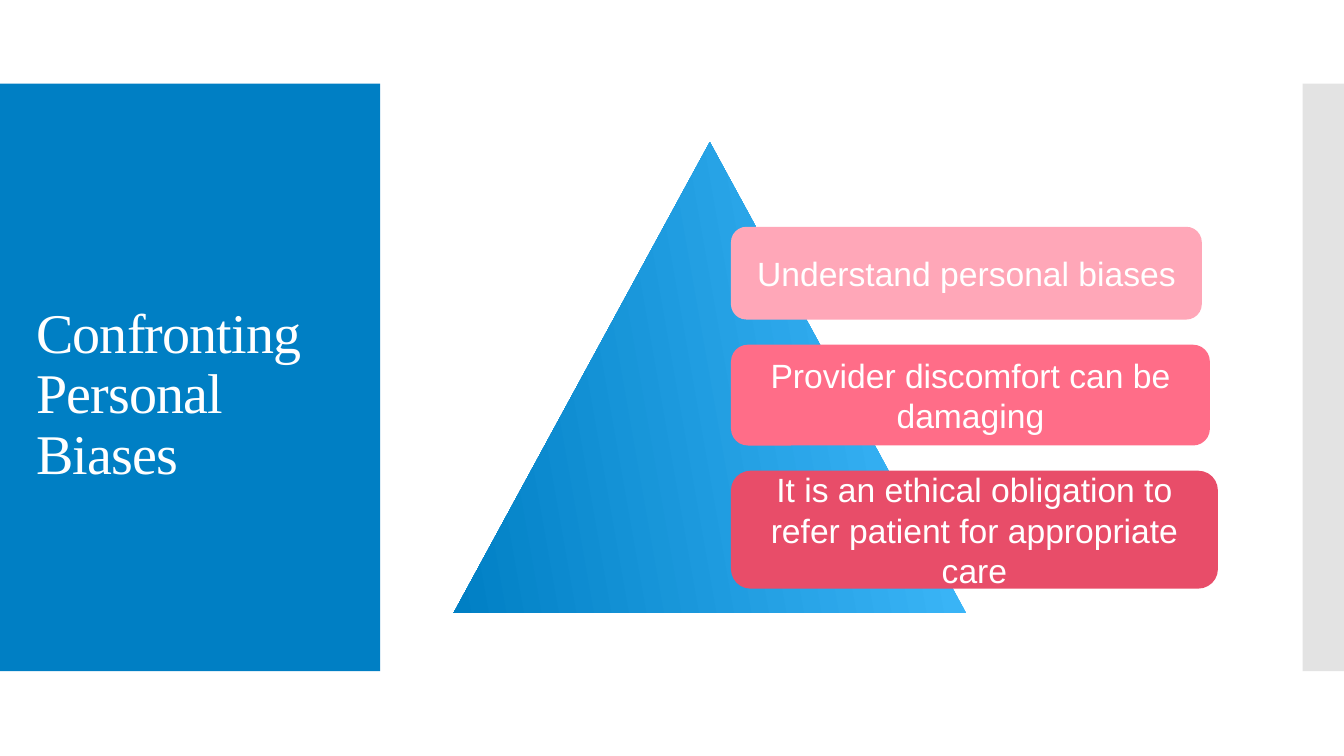
import pptx
import pptx.util
import pptx.dml.color
import pptx.enum.shapes
import pptx.enum.text
import lxml.etree
from pptx.util import Inches

# Content
TITLE = "Confronting Personal Biases"
# text, fill, width, height
STEPS = [
    ("Understand personal biases", "pale", 4.67, 0.92),
    ("Provider discomfort can be damaging", "pink", 4.75, 1),
    ("It is an ethical obligation to refer patient for appropriate care", "rose", 4.83, 1.17),
]
COLORS = {
    "blue": "007FC4", "sky": "43BDFF", "gray": "C8C8C8", "white": "FFFFFF",
    "pale": "FFA7B8", "pink": "FF6D88", "rose": "E84D69",
}
STEP_LEFT, STEP_TOP, STEP_GAP = 7.25, 2.25, 0.25
BAND_TOP, BAND_HEIGHT = 0.83, 5.83

SHAPES = pptx.enum.shapes.MSO_SHAPE
ALIGN = pptx.enum.text.PP_ALIGN


def rgb(color):
    return pptx.dml.color.RGBColor.from_string(COLORS[color])


def add_block(kind, left, top, width, height, color):
    block = slide.shapes.add_shape(
        kind, Inches(left), Inches(top), Inches(width), Inches(height))
    block.shadow.inherit = False
    block.line.fill.background()
    block.fill.solid()
    block.fill.fore_color.rgb = rgb(color)
    return block


def write(holder, text, size, font, align, line_spacing=None, tracking=None):
    frame = holder.text_frame
    frame.word_wrap = True
    frame.auto_size = pptx.enum.text.MSO_AUTO_SIZE.NONE
    frame.vertical_anchor = pptx.enum.text.MSO_ANCHOR.MIDDLE
    paragraph = frame.paragraphs[0]
    paragraph.alignment = align
    paragraph.line_spacing = line_spacing
    run = paragraph.add_run()
    run.text = text
    run.font.size = pptx.util.Pt(size)
    run.font.name = font
    run.font.color.rgb = rgb("white")
    if tracking is not None:
        run.font._element.set("spc", str(round(tracking * 100)))


deck = pptx.Presentation()
deck.slide_width, deck.slide_height = Inches(13.33), Inches(7.5)
slide = deck.slides.add_slide(deck.slide_layouts[5])

# Side bands, the right one half transparent
title_band = add_block(SHAPES.RECTANGLE, 0, BAND_TOP, 3.77, BAND_HEIGHT, "blue")
edge_band = add_block(SHAPES.RECTANGLE, 12.92, BAND_TOP, 0.41, BAND_HEIGHT, "gray")
edge_color = edge_band.fill._xPr.find(".//" + pptx.oxml.ns.qn("a:srgbClr"))
lxml.etree.SubElement(edge_color, pptx.oxml.ns.qn("a:alpha"), val="50000")

# Title, moved in front of its band
title = slide.shapes.title
title.left, title.top = Inches(0.26), Inches(1.41)
title.width, title.height = Inches(3.22), Inches(5.03)
write(title, TITLE, size=40, font="Times New Roman", align=ALIGN.LEFT,
      line_spacing=0.9, tracking=-0.6)
edge_band._element.addnext(title._element)

# Pyramid
pyramid = add_block(SHAPES.ISOSCELES_TRIANGLE, 4.5, 1.41, 5.08, 4.67, "blue")
pyramid.fill.gradient()
pyramid.fill.gradient_angle = 190
for stop, color in zip(pyramid.fill.gradient_stops, ("sky", "blue")):
    stop.color.rgb = rgb(color)

# Steps, stacked with equal gaps
step_top = STEP_TOP
for text, color, width, height in STEPS:
    step = add_block(SHAPES.ROUNDED_RECTANGLE, STEP_LEFT, step_top, width, height, color)
    write(step, text, size=24, font="Arial", align=ALIGN.CENTER)
    step_top += height + STEP_GAP

deck.save("out.pptx")
